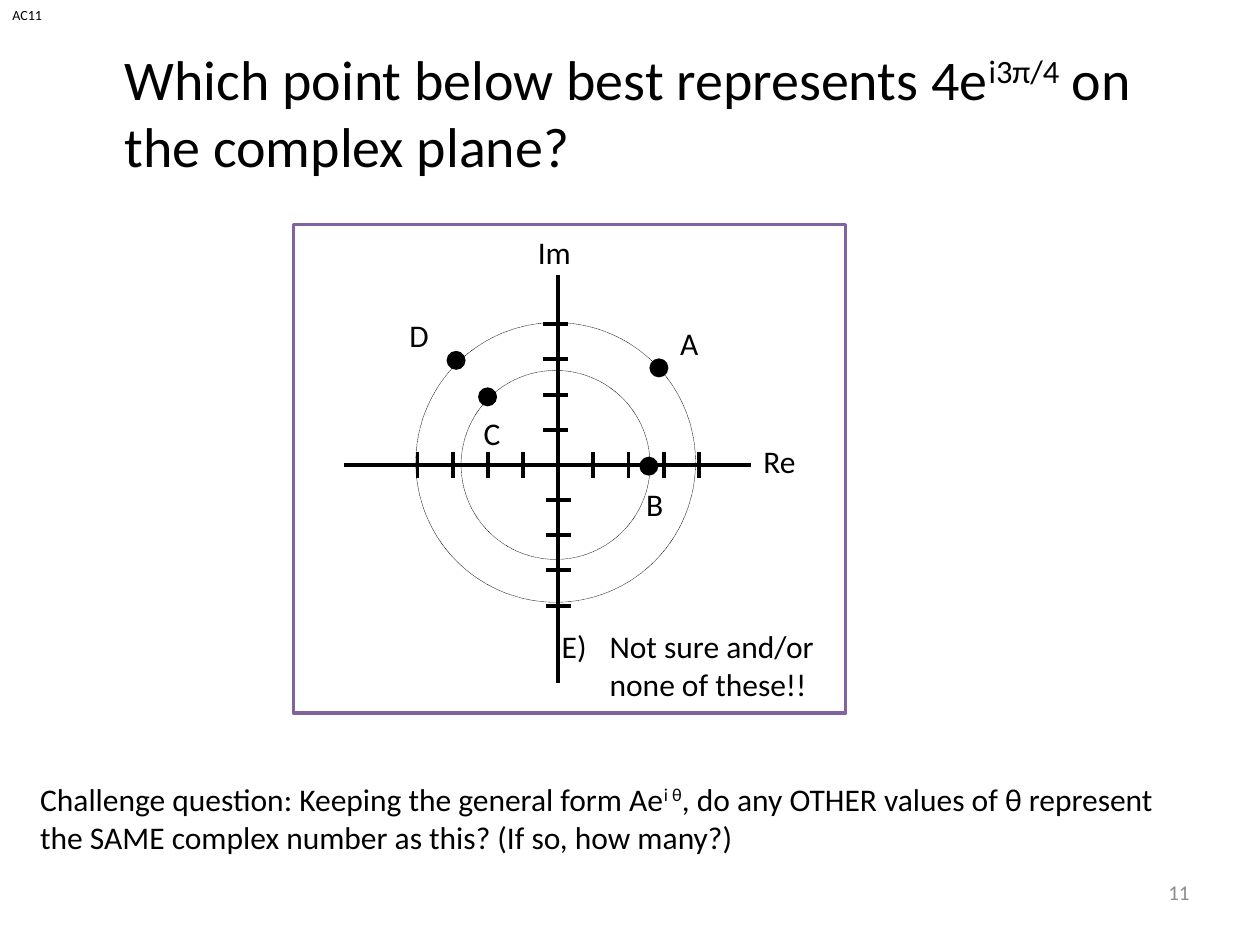
import pptx
import pptx.util
import pptx.dml.color
import pptx.enum.dml
import pptx.enum.shapes
import pptx.enum.text
import pptx.oxml.ns
from lxml import etree

Inches = pptx.util.Inches
Pt = pptx.util.Pt
SHAPE = pptx.enum.shapes.MSO_SHAPE
qn = pptx.oxml.ns.qn

COLORS = {"ink": "000000", "paper": "FFFFFF", "frame": "8064A2", "number": "8C8C8C"}
FONT = "Calibri"

# Runs are (text, is superscript); "\n" is a line break
TITLE = [("Which point below best represents 4e", False), ("i3π/4", True),
         (" on the complex plane?", False)]
CHALLENGE = [("Challenge question: Keeping the general form Ae", False), ("i θ", True),
             (", do any OTHER values of θ represent the SAME complex number as this? "
              "(If so, how many?)", False)]
SLIDE_TEXTS = [
    (TITLE, (0.89, 0.3, 8.74, 1.18), {"size": 32, "wrap": True}),
    (CHALLENGE, (0.22, 6.14, 9.11, 1.31), {"wrap": True}),
    ([("11", False)], (7.46, 6.83, 2.08, 0.5),
     {"size": 12, "color": "number", "wrap": True,
      "align": pptx.enum.text.PP_ALIGN.RIGHT, "anchor": pptx.enum.text.MSO_ANCHOR.MIDDLE}),
    ([("AC11", False)], (0, 0, 0.44, 0.24), {"size": 8}),
]
FRAME = (2.33, 1.78, 4.38, 3.88)
CIRCLES = [(4.41, 3.67, 1.11), (4.41, 3.69, 0.75)]  # centre x, centre y, radius
POINTS = [(5.15, 3.7), (5.23, 2.92), (3.62, 2.86), (3.87, 3.15)]
POINT_RADIUS = 0.07
LABELS = [("A", (5.3, 2.52, 0.38, 0.4)), ("B", (5.03, 3.8, 0.37, 0.4)),
          ("C", (3.74, 3.24, 0.38, 0.4)), ("D", (3.15, 2.46, 0.38, 0.4)),
          ("Re", (5.96, 3.46, 0.52, 0.4)), ("Im", (4.17, 1.8, 0.48, 0.4))]
CHOICE_E = ([("Not sure and/or\nnone of these!!", False)], (4.36, 4.93, 2.32, 0.71))

ORIGIN_X, ORIGIN_Y = 4.43, 3.69
AXES = [(ORIGIN_X, 5.42, ORIGIN_X, 2.18), (5.96, ORIGIN_Y, 2.73, ORIGIN_Y)]
UNIT, TICK_COUNT, TICK_HALF = 0.279, 4, 0.1
UPPER_TICK_SHIFT = -0.02  # ticks above the real axis sit slightly left


def rgb(name):
    return pptx.dml.color.RGBColor.from_string(COLORS[name])


def add_text(slide, runs, box, size=18, color="ink", wrap=False, align=None,
             anchor=pptx.enum.text.MSO_ANCHOR.TOP):
    frame = slide.shapes.add_textbox(*map(Inches, box)).text_frame
    frame.word_wrap = wrap
    frame.vertical_anchor = anchor
    paragraph = frame.paragraphs[0]
    paragraph.alignment = align
    for text, superscript in runs:
        for index, line in enumerate(text.split("\n")):
            if index:
                paragraph.add_line_break()
            run = paragraph.add_run()
            run.text = line
            for name, value in {"name": FONT, "size": Pt(size)}.items():
                setattr(run.font, name, value)
            run.font.color.rgb = rgb(color)
            if superscript:
                run._r.get_or_add_rPr().set("baseline", "30000")
    return paragraph


def number_paragraph(paragraph, start, indent):
    """Give the paragraph an automatic capital letter such as E)."""
    properties = paragraph._p.get_or_add_pPr()
    properties.set("marL", str(Inches(indent)))
    properties.set("indent", str(-Inches(indent)))
    etree.SubElement(properties, qn("a:buFont"), typeface=FONT)
    etree.SubElement(properties, qn("a:buAutoNum"), type="alphaUcParenR", startAt=str(start))


def add_outline(slide, kind, box, fill, line, width, dash=None):
    shape = slide.shapes.add_shape(kind, *map(Inches, box))
    shape.shadow.inherit = False
    if fill:
        shape.fill.solid()
        shape.fill.fore_color.rgb = rgb(fill)
    else:
        shape.fill.background()
    shape.line.color.rgb = rgb(line)
    shape.line.width = Pt(width)
    if dash:
        shape.line.dash_style = dash


def add_circle(slide, x, y, radius, **style):
    box = (x - radius, y - radius, 2 * radius, 2 * radius)
    add_outline(slide, SHAPE.OVAL, box, line="ink", **style)


def add_line(slide, *ends):
    line = slide.shapes.add_connector(pptx.enum.shapes.MSO_CONNECTOR.STRAIGHT,
                                      *map(Inches, ends))
    line.line.color.rgb = rgb("ink")
    line.line.width = Pt(2.25)
    etree.SubElement(line._element.spPr, qn("a:effectLst"))


def add_axes(slide):
    for axis in AXES:
        add_line(slide, *axis)
    for step in range(-TICK_COUNT, TICK_COUNT + 1):
        if step == 0:
            continue
        x, y = ORIGIN_X + step * UNIT, ORIGIN_Y - step * UNIT
        middle = ORIGIN_X + (UPPER_TICK_SHIFT if step > 0 else 0)
        add_line(slide, x, ORIGIN_Y + TICK_HALF, x, ORIGIN_Y - TICK_HALF)
        add_line(slide, middle + TICK_HALF, y, middle - TICK_HALF, y)


def main():
    presentation = pptx.Presentation()
    presentation.slide_width, presentation.slide_height = Inches(10), Inches(7.5)
    slide = presentation.slides.add_slide(presentation.slide_layouts[6])

    add_outline(slide, SHAPE.RECTANGLE, FRAME, fill="paper", line="frame", width=2)
    for circle in CIRCLES:
        add_circle(slide, *circle, fill=None, width=0.25,
                   dash=pptx.enum.dml.MSO_LINE.ROUND_DOT)
    for point in POINTS:
        add_circle(slide, *point, POINT_RADIUS, fill="ink", width=0.75)
    add_axes(slide)

    for label, box in LABELS:
        add_text(slide, [(label, False)], box)
    number_paragraph(add_text(slide, *CHOICE_E), start=5, indent=0.38)
    for runs, box, style in SLIDE_TEXTS:
        add_text(slide, runs, box, **style)

    presentation.save("out.pptx")


if __name__ == "__main__":
    main()
